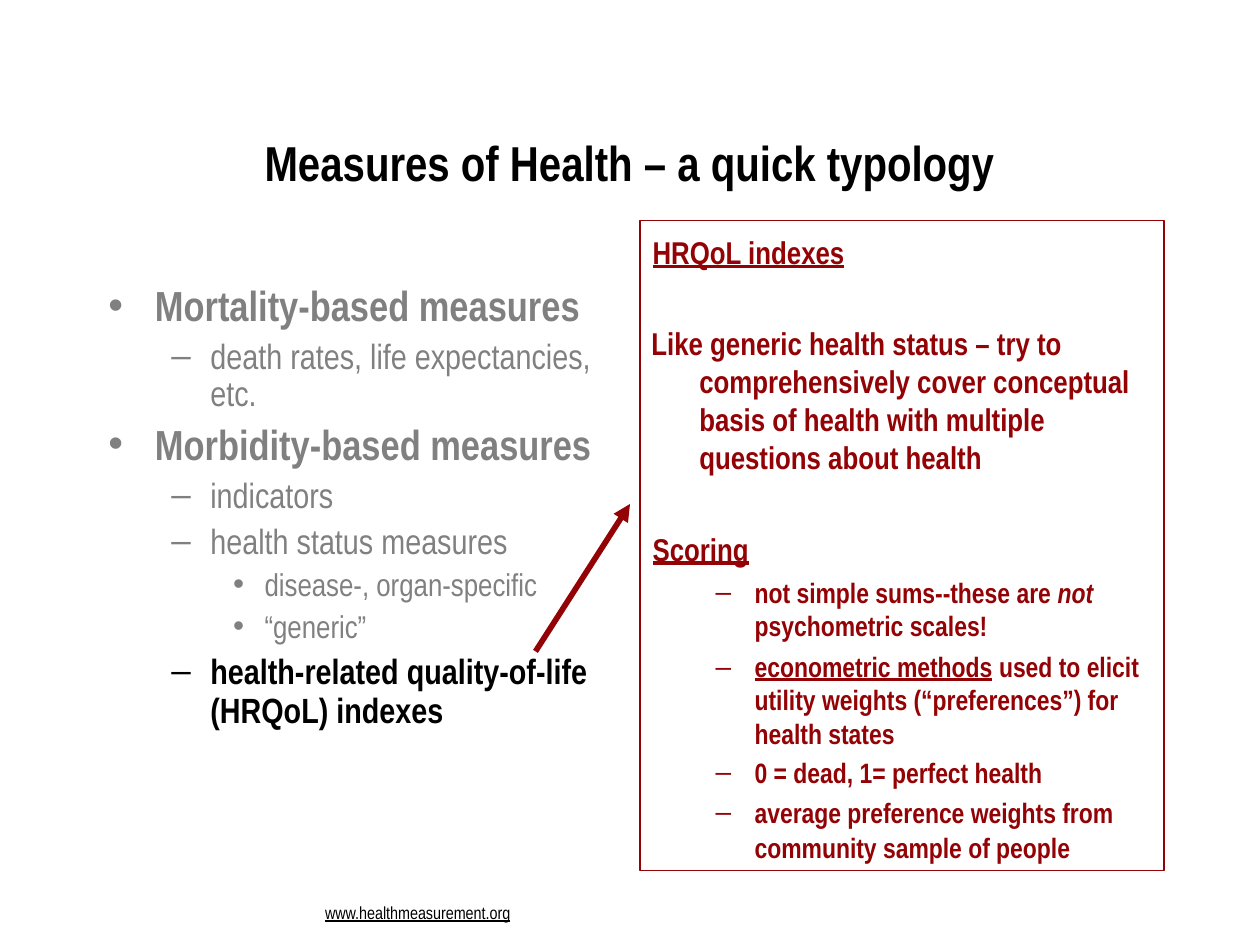
from lxml.etree import SubElement
from pptx import Presentation
from pptx.dml.color import RGBColor
from pptx.enum.shapes import MSO_CONNECTOR, MSO_SHAPE
from pptx.enum.text import MSO_ANCHOR, MSO_AUTO_SIZE, PP_ALIGN
from pptx.oxml.ns import qn
from pptx.util import Inches, Pt

BLACK = RGBColor(0, 0, 0)
GREY = RGBColor(0x80, 0x80, 0x80)
RED = RGBColor(0x93, 0x03, 0x06)
WHITE = RGBColor(0xFF, 0xFF, 0xFF)

HEADING = {"size": Pt(24), "bold": True, "color": GREY}
DETAIL = {"size": Pt(20), "bold": False, "color": GREY}
EXAMPLE = {"size": Pt(18), "bold": False, "color": GREY}
FOCUS = {"size": Pt(20), "bold": True, "color": BLACK}
BODY = {"size": Pt(18), "bold": True, "color": RED}
TERM = {**BODY, "underline": True}
POINT = {"size": Pt(16), "bold": True, "color": RED}

TOPIC_LAYOUT = {"level": 0, "indent": (0.39, -0.37), "bullet": "•"}
DETAIL_LAYOUT = {"level": 1, "indent": (0.83, -0.31), "bullet": "–"}
EXAMPLE_LAYOUT = {"level": 2, "indent": (1.26, -0.25), "bullet": "•"}
TERM_LAYOUT = {"level": 0, "indent": (0.1, 0), "bullet": None}
BODY_LAYOUT = {"level": 0, "indent": (0.47, -0.38), "bullet": None}
POINT_LAYOUT = {"level": 0, "indent": (0.91, -0.31), "bullet": "–"}

TYPOLOGY = [
    (TOPIC_LAYOUT, HEADING, 0, None, [("Mortality-based measures", {})]),
    (DETAIL_LAYOUT, DETAIL, 5.6, Pt(20.9), [("death rates, life expectancies, etc.", {})]),
    (TOPIC_LAYOUT, HEADING, 3, None, [("Morbidity-based measures", {})]),
    (DETAIL_LAYOUT, DETAIL, 3, None, [("indicators", {})]),
    (DETAIL_LAYOUT, DETAIL, 2.1, None, [("health status measures", {})]),
    (EXAMPLE_LAYOUT, EXAMPLE, 2, None, [("disease-, organ-specific", {})]),
    (EXAMPLE_LAYOUT, EXAMPLE, 2.4, None, [("“generic”", {})]),
    (DETAIL_LAYOUT, FOCUS, 4.7, Pt(22.1),
     [("health-related quality-of-life (HRQoL) indexes", {})]),
]

INDEXES = [
    (TERM_LAYOUT, TERM, 0, None, [("HRQoL indexes", {})]),
    (BODY_LAYOUT, BODY, 30.5, None,
     [("Like generic health status – try to comprehensively cover conceptual "
       "basis of health with multiple questions about health", {})]),
    (TERM_LAYOUT, TERM, 31, None, [("Scoring", {})]),
    (POINT_LAYOUT, POINT, 4.4, Pt(19.1),
     [("not simple sums--these are ", {}), ("not", {"italic": True}),
      (" psychometric scales!", {})]),
    (POINT_LAYOUT, POINT, 4.6, Pt(19),
     [("econometric methods", {"underline": True}),
      (" used to elicit utility weights (“preferences”) for health states", {})]),
    (POINT_LAYOUT, POINT, 3.1, None, [("0 = dead, 1= perfect health", {})]),
    (POINT_LAYOUT, POINT, 3.1, 1.04,
     [("average preference weights from community sample of people", {})]),
]


def set_font(font, formats):
    font.name = "Arial Narrow"
    for key, value in formats.items():
        if key == "color":
            font.color.rgb = value
        else:
            setattr(font, key, value)


def set_paragraph(paragraph, layout, formats, before, spacing, runs):
    properties = paragraph._p.get_or_add_pPr()
    left, first = layout["indent"]
    properties.set("marL", str(Inches(left)))
    properties.set("indent", str(Inches(first)))
    if layout["bullet"]:
        SubElement(properties, qn("a:buFont"), typeface="Arial")
        SubElement(properties, qn("a:buChar"), char=layout["bullet"])
    else:
        SubElement(properties, qn("a:buNone"))
    values = {"level": layout["level"], "alignment": PP_ALIGN.LEFT,
              "space_before": Pt(before), "line_spacing": spacing}
    for key, value in values.items():
        setattr(paragraph, key, value)
    for text, emphasis in runs:
        run = paragraph.add_run()
        run.text = text
        set_font(run.font, {**formats, **emphasis})


def fill_text(frame, top, paragraphs):
    values = {"margin_left": 0, "margin_right": 0, "margin_bottom": 0,
              "margin_top": Inches(top), "word_wrap": True,
              "auto_size": MSO_AUTO_SIZE.NONE, "vertical_anchor": MSO_ANCHOR.TOP}
    for key, value in values.items():
        setattr(frame, key, value)
    for number, content in enumerate(paragraphs):
        paragraph = frame.add_paragraph() if number else frame.paragraphs[0]
        set_paragraph(paragraph, *content)


def add_title(slide, text):
    title = slide.shapes.title
    place = {"left": 1.68, "top": 0.96, "width": 6.63, "height": 0.63}
    for key, value in place.items():
        setattr(title, key, Inches(value))
    layout = {"level": 0, "indent": (0.42, 0), "bullet": None}
    formats = {"size": Pt(28), "bold": True, "color": BLACK}
    fill_text(title.text_frame, 0.09, [(layout, formats, 0, None, [(text, {})])])


def add_text(slide, place, top, paragraphs):
    box = slide.shapes.add_textbox(*map(Inches, place))
    fill_text(box.text_frame, top, paragraphs)


def add_panel(slide, place, top, paragraphs):
    panel = slide.shapes.add_shape(MSO_SHAPE.RECTANGLE, *map(Inches, place))
    panel.shadow.inherit = False
    panel.fill.solid()
    panel.fill.fore_color.rgb = WHITE
    panel.line.color.rgb = RED
    panel.line.width = Pt(1)
    fill_text(panel.text_frame, top, paragraphs)


def add_arrow(slide, start, end):
    arrow = slide.shapes.add_connector(MSO_CONNECTOR.STRAIGHT, *map(Inches, start + end))
    arrow.line.color.rgb = RED
    arrow.line.width = Pt(3.25)
    SubElement(arrow.line._get_or_add_ln(), qn("a:tailEnd"), type="triangle")
    SubElement(arrow._element.spPr, qn("a:effectLst"))


def main():
    deck = Presentation()
    deck.slide_width, deck.slide_height = Inches(10), Inches(7.5)
    slide = deck.slides.add_slide(deck.slide_layouts[5])
    add_title(slide, "Measures of Health – a quick typology")
    add_text(slide, (0.84, 2.12, 3.87, 3.64), 0.1, TYPOLOGY)
    add_panel(slide, (5.08, 1.75, 4.16, 5.16), 0.1, INDEXES)
    add_arrow(slide, (4.25, 5.17), (5, 4))
    address = {"size": Pt(10), "color": BLACK, "underline": True}
    layout = {"level": 0, "indent": (0.01, 0), "bullet": None}
    add_text(slide, (2.57, 7.16, 1.5, 0.19), 0,
             [(layout, address, 0, None, [("www.healthmeasurement.org", {})])])
    deck.save("out.pptx")


if __name__ == "__main__":
    main()
